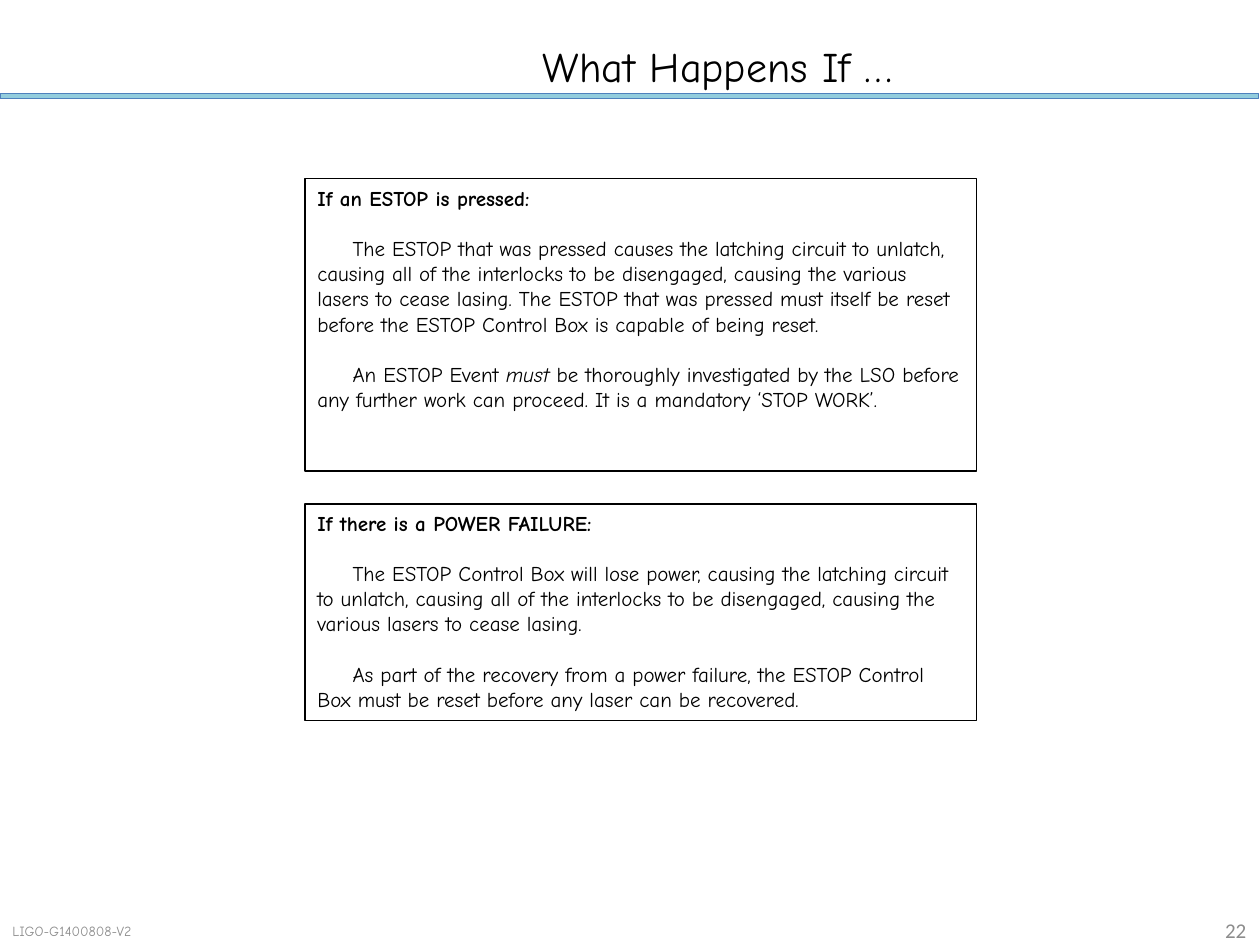
from dataclasses import dataclass

import pptx
import pptx.dml.color
import pptx.enum.shapes
import pptx.enum.text
import pptx.util

WIDTH = pptx.util.Inches(10)
HEIGHT = pptx.util.Inches(7.5)
COLOURS = {"text": "000000", "muted": "8C8C8C", "band": "93CDDD", "band_line": "4F81BD"}
HAND = "Comic Neue"
ALIGN = pptx.enum.text.PP_ALIGN
ANCHOR = pptx.enum.text.MSO_ANCHOR


@dataclass(frozen=True)
class Area:
    """A rectangle in percent of the slide's width and height."""
    left: float
    top: float
    width: float
    height: float

    def lengths(self) -> list[int]:
        return [round(share * side / 100) for share, side in
                zip((self.left, self.top, self.width, self.height),
                    (WIDTH, HEIGHT, WIDTH, HEIGHT))]


@dataclass(frozen=True)
class Scenario:
    area: Area
    heading: str
    paragraphs: list[list[str]]  # every second span is italic


SCENARIOS = [
    Scenario(Area(24.2, 18.93, 53.3, 30.93), "If an ESTOP is pressed:", [
        ["The ESTOP that was pressed causes the latching circuit to unlatch, causing all of "
         "the interlocks to be disengaged, causing the various lasers to cease lasing. The "
         "ESTOP that was pressed must itself be reset before the ESTOP Control Box is "
         "capable of being reset."],
        ["An ESTOP Event ", "must", " be thoroughly investigated by the LSO before any "
         "further work can proceed. It is a mandatory ‘STOP WORK’."],
    ]),
    Scenario(Area(24.2, 53.33, 53.3, 22.93), "If there is a POWER FAILURE:", [
        ["The ESTOP Control Box will lose power, causing the latching circuit to unlatch, "
         "causing all of the interlocks to be disengaged, causing the various lasers to "
         "cease lasing."],
        ["As part of the recovery from a power failure, the ESTOP Control Box must be reset "
         "before any laser can be recovered."],
    ]),
]


def colour(name: str) -> pptx.dml.color.RGBColor:
    return pptx.dml.color.RGBColor.from_string(COLOURS[name])


def write(para, text: str, *, size: float = 12, font: str = HAND, ink: str = "text",
          bold: bool = False, italic: bool = False, align=ALIGN.LEFT) -> None:
    para.alignment = align
    span = para.add_run()
    span.text = text
    span.font.name = font
    span.font.size = pptx.util.Pt(size)
    span.font.bold = bold
    span.font.italic = italic
    span.font.color.rgb = colour(ink)


def place(shape, area: Area) -> None:
    shape.left, shape.top, shape.width, shape.height = area.lengths()


def add_rectangle(page, area: Area, line: str, fill: str | None = None):
    box = page.shapes.add_shape(pptx.enum.shapes.MSO_SHAPE.RECTANGLE, *area.lengths())
    box.shadow.inherit = False
    if fill:
        box.fill.solid()
        box.fill.fore_color.rgb = colour(fill)
    else:
        box.fill.background()
    box.line.color.rgb = colour(line)
    box.line.width = pptx.util.Pt(0.75)
    return box


def add_label(page, area: Area, text: str, **style) -> None:
    frame = page.shapes.add_textbox(*area.lengths()).text_frame
    frame.word_wrap = True
    frame.vertical_anchor = ANCHOR.MIDDLE
    write(frame.paragraphs[0], text, ink="muted", **style)


def add_scenario(page, scenario: Scenario) -> None:
    frame = add_rectangle(page, scenario.area, line="text").text_frame
    frame.word_wrap = True
    frame.vertical_anchor = ANCHOR.TOP
    write(frame.paragraphs[0], scenario.heading, bold=True)
    for spans in scenario.paragraphs:
        para = frame.add_paragraph()
        para.space_before = pptx.util.Pt(14.4)
        para._p.get_or_add_pPr().set("indent", str(pptx.util.Inches(0.28)))
        for index, text in enumerate(spans):
            write(para, text, italic=index % 2 == 1)


def main() -> None:
    deck = pptx.Presentation()
    deck.slide_width, deck.slide_height = WIDTH, HEIGHT
    page = deck.slides.add_slide(deck.slide_layouts[5])

    title = page.shapes.title
    place(title, Area(18.9, 4, 76.1, 5.87))
    title.text_frame.vertical_anchor = ANCHOR.MIDDLE
    write(title.text_frame.paragraphs[0], "What Happens If …", size=24, align=ALIGN.CENTER)

    add_rectangle(page, Area(0, 9.87, 99.9, 0.53), line="band_line", fill="band")
    for scenario in SCENARIOS:
        add_scenario(page, scenario)
    add_label(page, Area(0, 97.2, 13.9, 2.67), "LIGO-G1400808-V2", size=8)
    add_label(page, Area(92.6, 96.93, 7.3, 2.93), "22", font="Calibri", align=ALIGN.RIGHT)
    deck.save("out.pptx")


if __name__ == "__main__":
    main()
